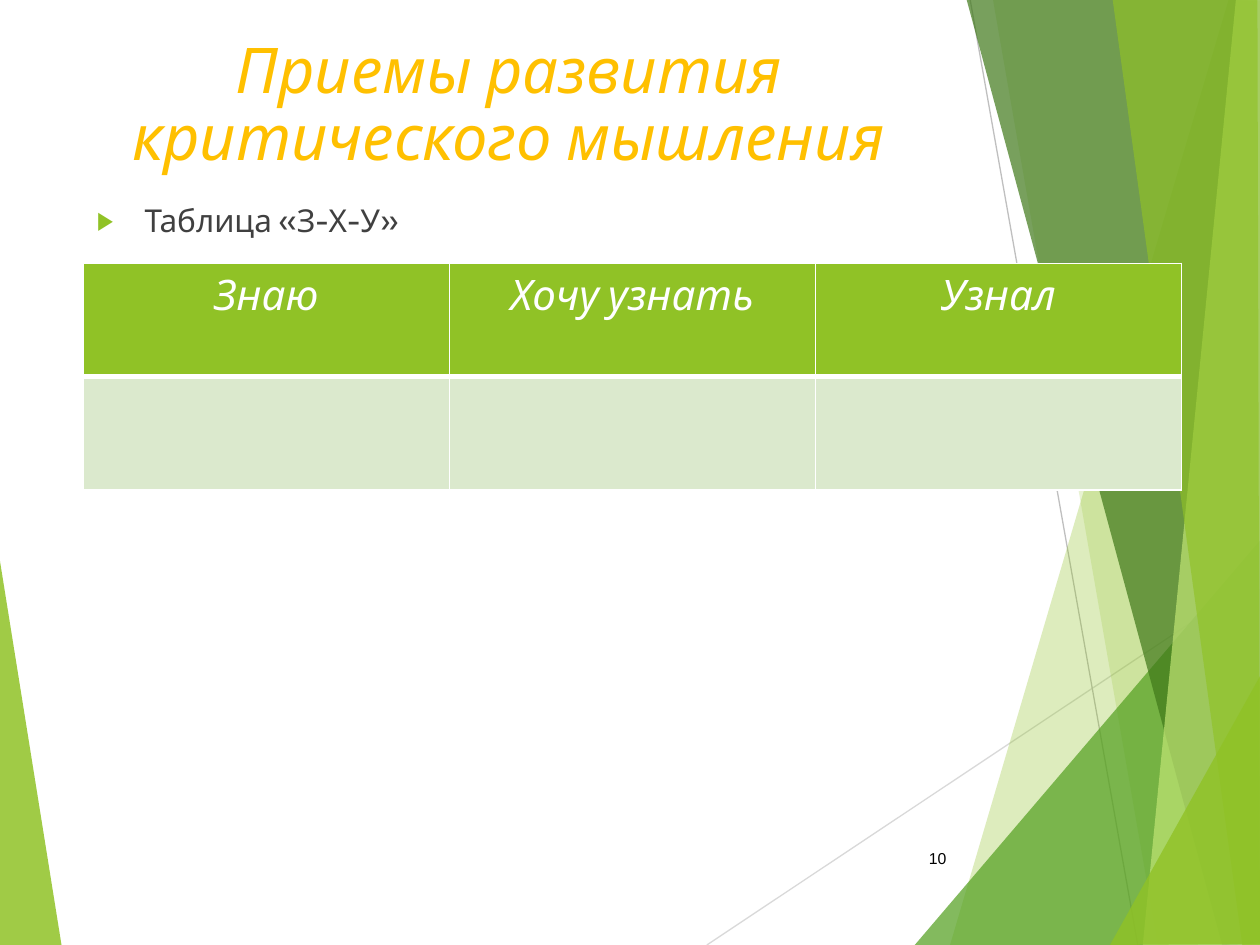
from dataclasses import dataclass

from lxml import etree
from pptx import Presentation
from pptx.dml.color import RGBColor
from pptx.enum.shapes import MSO_CONNECTOR
from pptx.enum.text import MSO_ANCHOR, PP_ALIGN
from pptx.oxml.ns import qn
from pptx.util import Inches, Pt

LEFT, CENTER, RIGHT = PP_ALIGN.LEFT, PP_ALIGN.CENTER, PP_ALIGN.RIGHT
TOP, MIDDLE = MSO_ANCHOR.TOP, MSO_ANCHOR.MIDDLE
STRAIGHT = MSO_CONNECTOR.STRAIGHT


@dataclass(frozen=True)
class Theme:
    lime: str = "90C226"
    green: str = "54A021"
    forest: str = "3F7819"
    pale_lime: str = "C0E474"
    pale_row: str = "DBE9CD"
    gold: str = "FFC000"
    text: str = "404040"
    white: str = "FFFFFF"
    black: str = "000000"
    font: str = "Cabin"
    number_font: str = "Arial"
    title_size: int = 36
    header_size: int = 24
    body_size: int = 18
    number_size: int = 9


theme = Theme()


def write(frame, text, *, size, color, font=theme.font, italic=False,
          align=LEFT, anchor=TOP):
    frame.word_wrap = True
    frame.vertical_anchor = anchor
    paragraph = frame.paragraphs[0]
    paragraph.alignment = align
    run = paragraph.add_run()
    run.text = text
    run.font.name = font
    run.font.size = Pt(size)
    run.font.italic = italic
    run.font.color.rgb = RGBColor.from_string(color)
    return paragraph


def add_xml(parent, tag, **attributes):
    """Append a DrawingML child element and return it."""
    return etree.SubElement(parent, qn(tag), attributes)


prs = Presentation()
prs.slide_width, prs.slide_height = Inches(10), Inches(7.5)
slide = prs.slides.add_slide(prs.slide_layouts[5])
shapes = slide.shapes

# Background facets: corner points, colour, opacity in percent
left_facet = ([(-0.01, 4.39), (0.49, 7.51), (-0.01, 7.5)], theme.lime, 85)
right_facets = [
    ([(9.75, 0), (7.54, 7.5), (10.02, 7.51), (10.01, 0.01)], theme.lime, 30),
    ([(7.88, -0.01), (9.19, 7.5), (10.01, 7.5), (10.01, -0.01)], theme.lime, 20),
    ([(7.26, 7.5), (10, 4.29), (10.01, 7.5)], theme.green, 72),
    ([(7.67, -0.01), (9.7, 7.5), (10.01, 7.49), (10.01, -0.01)], theme.forest, 70),
    ([(9.81, -0.01), (9.07, 7.5), (10.01, 7.5), (10, -0.01)], theme.pale_lime, 70),
    ([(8.83, -0.01), (9.86, 7.5), (10, 7.5), (9.98, -0.01)], theme.lime, 65),
    ([(8.81, 7.5), (10.01, 5.35), (10.01, 7.49)], theme.lime, 80),
]
rays = [((5.61, 7.5), (10.01, 4.57), "D9D9D9"), ((7.7, 0), (9.03, 7.5), "BFBFBF")]

for start, end, color in rays:
    ray = shapes.add_connector(STRAIGHT, *map(Inches, start + end))
    ray.line.color.rgb = RGBColor.from_string(color)
    ray.line.width = Pt(0.75)
    add_xml(ray._element.spPr, "a:effectLst")

for corners, color, opacity in [left_facet] + right_facets:
    points = [(Inches(x), Inches(y)) for x, y in corners]
    outline = shapes.build_freeform(*points[0])
    outline.add_line_segments(points[1:], close=True)
    facet = outline.convert_to_shape()
    facet.shadow.inherit = False
    facet.line.fill.background()
    facet.fill.solid()
    facet.fill.fore_color.rgb = RGBColor.from_string(color)
    tint = facet._element.spPr.find(qn("a:solidFill"))[0]
    add_xml(tint, "a:alpha", val=str(opacity * 1000))

# Title
title = shapes.title
title.left, title.top = Inches(0.57), Inches(0.13)
title.width, title.height = Inches(6.94), Inches(1.44)
heading = write(title.text_frame, "Приемы развития критического мышления",
                size=theme.title_size, color=theme.gold, italic=True,
                align=CENTER, anchor=MIDDLE)
heading.line_spacing = 0.88

# Technique name with its bullet
technique = shapes.add_textbox(Inches(0.67), Inches(1.55), Inches(3.38), Inches(4.24))
bullet = write(technique.text_frame, "Таблица «З-Х-У»",
               size=theme.body_size, color=theme.text)
bullet.space_before = Pt(10)
bullet_format = bullet._p.get_or_add_pPr()
bullet_format.set("marL", str(Inches(0.38)))
bullet_format.set("indent", str(-Inches(0.38)))
add_xml(add_xml(bullet_format, "a:buClr"), "a:srgbClr", val=theme.lime)
add_xml(bullet_format, "a:buSzPct", val="80000")
add_xml(bullet_format, "a:buFont", typeface=theme.number_font)
add_xml(bullet_format, "a:buChar", char="▶")

# Know / want to know / learned table
headers = ["Знаю", "Хочу узнать", "Узнал"]
row_fills = [theme.lime, theme.pale_row]
table = shapes.add_table(len(row_fills), len(headers), Inches(0.66), Inches(2.09),
                         Inches(8.72), Inches(1.8)).table
for r, row_fill in enumerate(row_fills):
    for c, header in enumerate(headers):
        cell = table.cell(r, c)
        cell_format = cell._tc.get_or_add_tcPr()
        widths = {"L": 1, "R": 1, "T": 3 if r == 1 else 1, "B": 3 if r == 0 else 1}
        for side, width in widths.items():
            border = add_xml(cell_format, f"a:ln{side}", w=str(Pt(width)))
            add_xml(add_xml(border, "a:solidFill"), "a:srgbClr", val=theme.white)
        cell.fill.solid()
        cell.fill.fore_color.rgb = RGBColor.from_string(row_fill)
        if r == 0:
            write(cell.text_frame, header, size=theme.header_size,
                  color=theme.white, italic=True, align=CENTER)

# Page number
page_number = shapes.add_textbox(Inches(7.05), Inches(6.61), Inches(0.56), Inches(0.4))
write(page_number.text_frame, "10", size=theme.number_size, color=theme.black,
      font=theme.number_font, align=RIGHT, anchor=MIDDLE)

prs.save("out.pptx")
